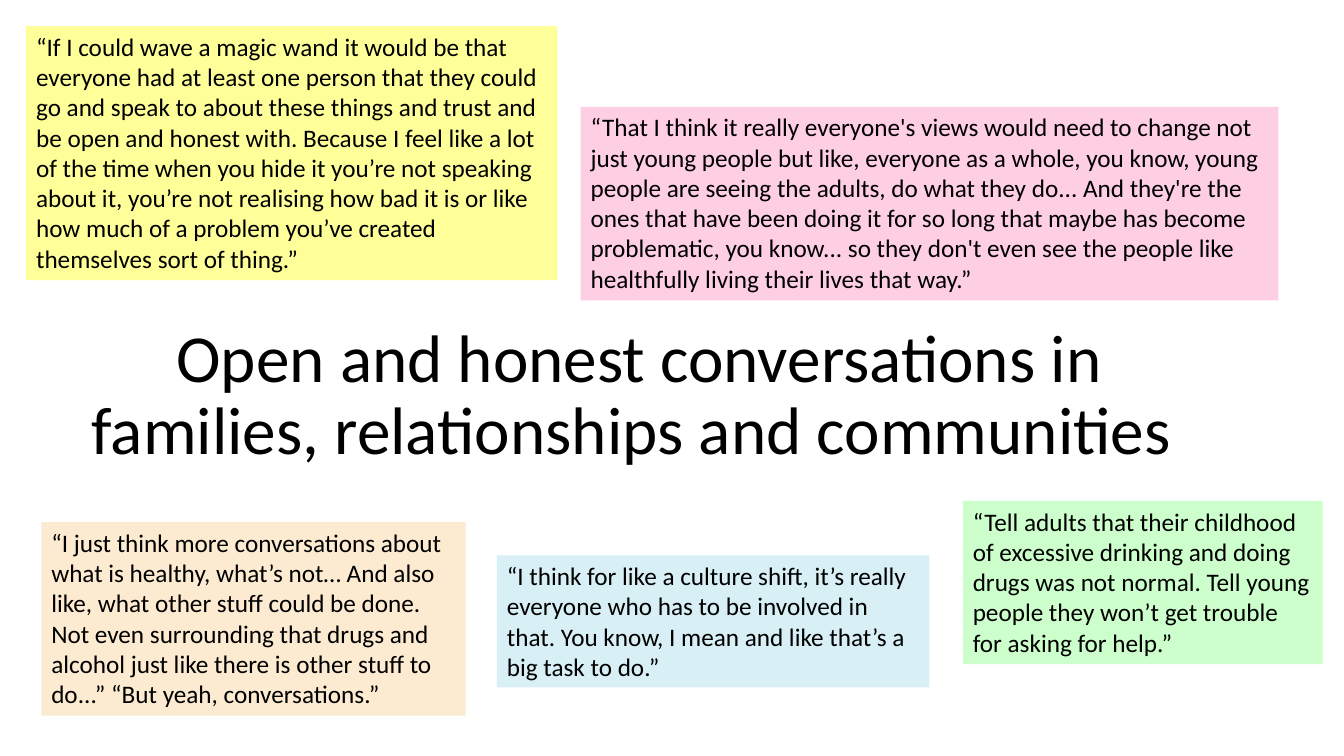
from pptx import Presentation
from pptx.dml.color import RGBColor
from pptx.enum.text import MSO_ANCHOR, MSO_AUTO_SIZE, PP_ALIGN
from pptx.util import Inches, Pt

MIDDLE = MSO_ANCHOR.MIDDLE
TOP = MSO_ANCHOR.TOP
FIXED = MSO_AUTO_SIZE.NONE
GROW = MSO_AUTO_SIZE.SHAPE_TO_FIT_TEXT
CENTER = PP_ALIGN.CENTER
LEFT = PP_ALIGN.LEFT

FONT = "Calibri"
COLORS = {
    "text": "000000",
    "orange": "FCEBD1",
    "green": "CCFFCC",
    "yellow": "FFFF99",
    "pink": "FECEE3",
    "blue": "D7EFF5",
}

TITLE = "Open and honest conversations in families, relationships and communities "
TITLE_AREA = (4.43, 42.8, 86.27, 19.33)

QUOTES = [
    ("orange", (3.08, 69.07, 31.58, 25.6),
     "“I just think more conversations about what is healthy, what’s not… And also like, "
     "what other stuff could be done. Not even surrounding that drugs and alcohol just like "
     "there is other stuff to do...” “But yeah, conversations.”"),
    ("green", (71.64, 66.27, 26.78, 21.6),
     "“Tell adults that their childhood of excessive drinking and doing drugs was not normal. "
     "Tell young people they won’t get trouble for asking for help.”"),
    ("yellow", (1.95, 3.47, 39.53, 33.6),
     "“If I could wave a magic wand it would be that everyone had at least one person that "
     "they could go and speak to about these things and trust and be open and honest with. "
     "Because I feel like a lot of the time when you hide it you’re not speaking about it, "
     "you’re not realising how bad it is or like how much of a problem you’ve created "
     "themselves sort of thing.”"),
    ("pink", (43.21, 14.13, 51.91, 25.6),
     "“That I think it really everyone's views would need to change not just young people but "
     "like, everyone as a whole, you know, young people are seeing the adults, do what they "
     "do... And they're the ones that have been doing it for so long that maybe has become "
     "problematic, you know... so they don't even see the people like healthfully living "
     "their lives that way.”"),
    ("blue", (36.98, 73.47, 32.18, 17.47),
     "“I think for like a culture shift, it’s really everyone who has to be involved in that. "
     "You know, I mean and like that’s a big task to do.”"),
]

deck = Presentation()
deck.slide_width = Inches(13.33)
deck.slide_height = Inches(7.5)
page = deck.slides.add_slide(deck.slide_layouts[5])


def place(percents):
    sides = (deck.slide_width, deck.slide_height) * 2
    return [int(side * percent / 100) for side, percent in zip(sides, percents)]


def write(box, text, size, align, anchor, fit, spacing):
    frame = box.text_frame
    frame.text = text
    frame.word_wrap = True
    frame.auto_size = fit
    frame.vertical_anchor = anchor
    para = frame.paragraphs[0]
    para.alignment = align
    para.line_spacing = spacing
    font = para.runs[0].font
    font.name = FONT
    font.size = Pt(size)
    font.color.rgb = RGBColor.from_string(COLORS["text"])


title = page.shapes.title
title.left, title.top, title.width, title.height = place(TITLE_AREA)
write(title, TITLE, 48, CENTER, MIDDLE, FIXED, 0.9)

for color, area, quote in QUOTES:
    box = page.shapes.add_textbox(*place(area))
    box.fill.solid()
    box.fill.fore_color.rgb = RGBColor.from_string(COLORS[color])
    write(box, quote, 18, LEFT, TOP, GROW, 1.0)

deck.save("out.pptx")
